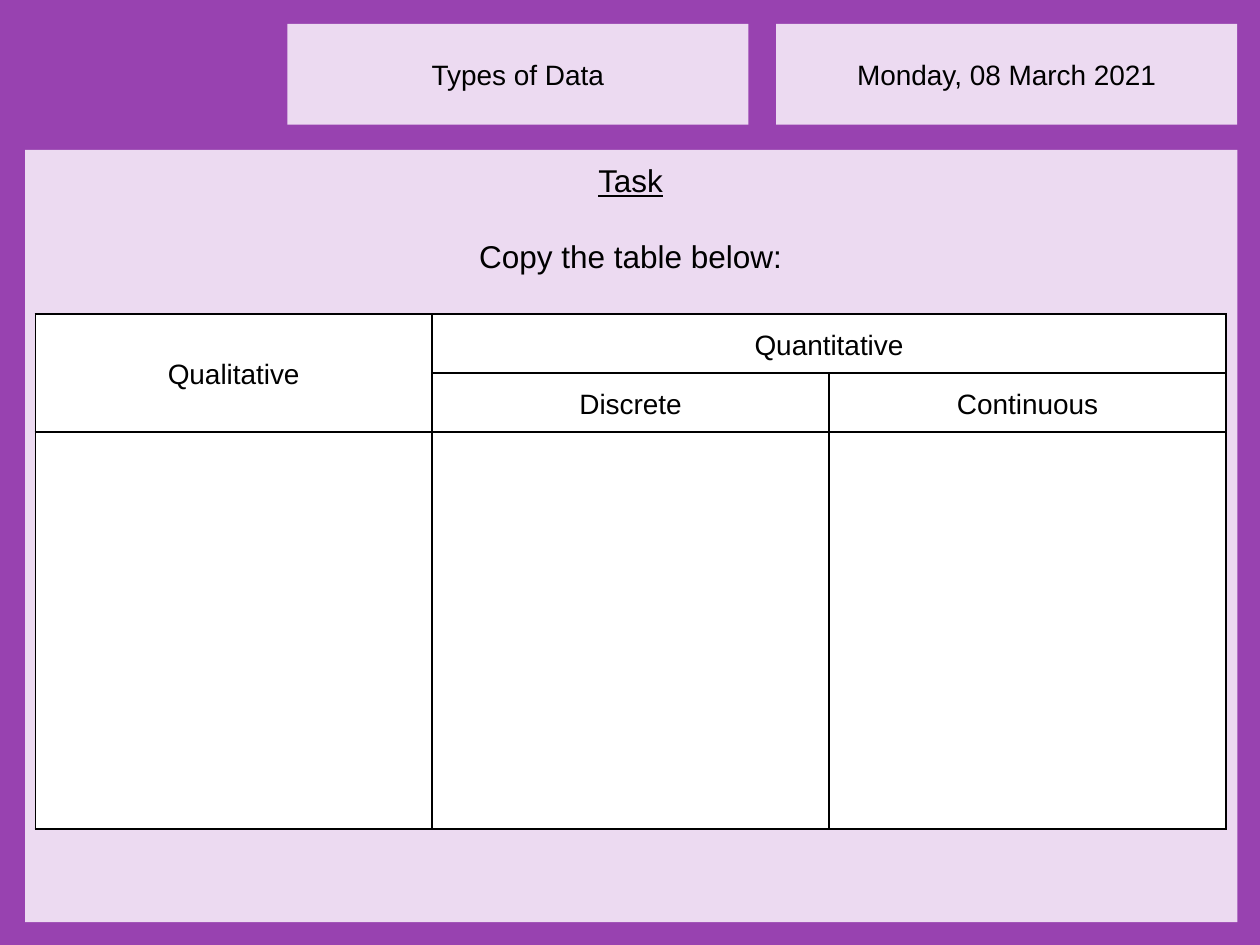
from lxml import etree
from pptx import Presentation
from pptx import util as u
from pptx.dml.color import RGBColor
from pptx.enum import shapes, text
from pptx.oxml.ns import qn

PURPLE, LILAC, WHITE, BLACK = "9842B0", "ECDAF1", "FFFFFF", "000000"


def colour(hex_code):
    return RGBColor.from_string(hex_code)


def paint(shape, hex_code):
    shape.fill.solid()
    shape.fill.fore_color.rgb = colour(hex_code)


def inches(*lengths):
    return [u.Inches(length) for length in lengths]


def write(paragraph, words, size=16, **font_values):
    paragraph.text = words
    paragraph.alignment = text.PP_ALIGN.CENTER
    values = {"name": "Arial", "size": u.Pt(size), **font_values}
    for key, value in values.items():
        setattr(paragraph.font, key, value)
    paragraph.font.color.rgb = colour(BLACK)


def add_panel(slide, box):
    panel = slide.shapes.add_shape(shapes.MSO_SHAPE.RECTANGLE, *inches(*box))
    panel.shadow.inherit = False
    panel.line.fill.background()
    paint(panel, LILAC)
    return panel


def label_panel(panel, words):
    frame = panel.text_frame
    frame.word_wrap = True
    frame.vertical_anchor = text.MSO_ANCHOR.MIDDLE
    write(frame.paragraphs[0], words)


def add_header(slide, left, top, width, height, gap):
    """Title on the left and date on the right, in equal panels."""
    panel_width = (width - gap) / 2
    title = slide.shapes.title
    title.left, title.top, title.width, title.height = inches(
        left, top, panel_width, height)
    paint(title, LILAC)
    label_panel(title, "Types of Data")
    date = add_panel(slide, (left + panel_width + gap, top, panel_width, height))
    label_panel(date, "Monday, 08 March 2021")


def add_instructions(slide, left, top, width, height):
    frame = slide.shapes.add_textbox(*inches(left, top, width, height)).text_frame
    frame.word_wrap = True
    write(frame.paragraphs[0], "Task", 18, underline=True)
    request = frame.add_paragraph()
    request.space_before = u.Pt(22)
    write(request, "Copy the table below:", 18)


def add_borders(cell):
    properties = cell._tc.get_or_add_tcPr()
    for side in ("lnL", "lnR", "lnT", "lnB"):
        line = etree.SubElement(properties, qn(f"a:{side}"), w=str(u.Pt(1)))
        fill = etree.SubElement(line, qn("a:solidFill"))
        etree.SubElement(fill, qn("a:srgbClr"), val=BLACK)


def add_data_table(slide, left, top, width, row_heights):
    columns = 3
    table = slide.shapes.add_table(
        len(row_heights), columns,
        *inches(left, top, width, sum(row_heights))).table
    for column in table.columns:
        column.width = u.Inches(width / columns)
    for row, height in zip(table.rows, row_heights):
        row.height = u.Inches(height)
    for cell in table.iter_cells():
        add_borders(cell)
        paint(cell, WHITE)
        cell.vertical_anchor = text.MSO_ANCHOR.MIDDLE
        cell.margin_left = cell.margin_right = u.Inches(0.03)
        cell.margin_top = cell.margin_bottom = u.Inches(0.01)

    table.cell(0, 0).merge(table.cell(1, 0))
    table.cell(0, 1).merge(table.cell(0, 2))
    headings = {(0, 0): "Qualitative", (0, 1): "Quantitative",
                (1, 1): "Discrete", (1, 2): "Continuous"}
    for position, words in headings.items():
        heading = table.cell(*position).text_frame.paragraphs[0]
        heading.line_spacing = 1.15
        heading.space_after = u.Pt(10)
        write(heading, words)


def add_task(slide, left, top, width, height):
    add_panel(slide, (left, top, width, height))
    inner_left, inner_width = left + 0.08, width - 0.17
    add_data_table(slide, inner_left, top + 1.3, inner_width, (0.47, 0.47, 3.15))
    add_instructions(slide, inner_left, top + 0.04, inner_width, 1.01)


def main():
    deck = Presentation()
    deck.slide_width, deck.slide_height = inches(10, 7.5)
    slide = deck.slides.add_slide(deck.slide_layouts[5])
    paint(slide.background, PURPLE)
    add_header(slide, 2.28, 0.19, 7.54, 0.8, gap=0.22)
    add_task(slide, 0.2, 1.19, 9.62, 6.13)
    deck.save("out.pptx")


if __name__ == "__main__":
    main()
